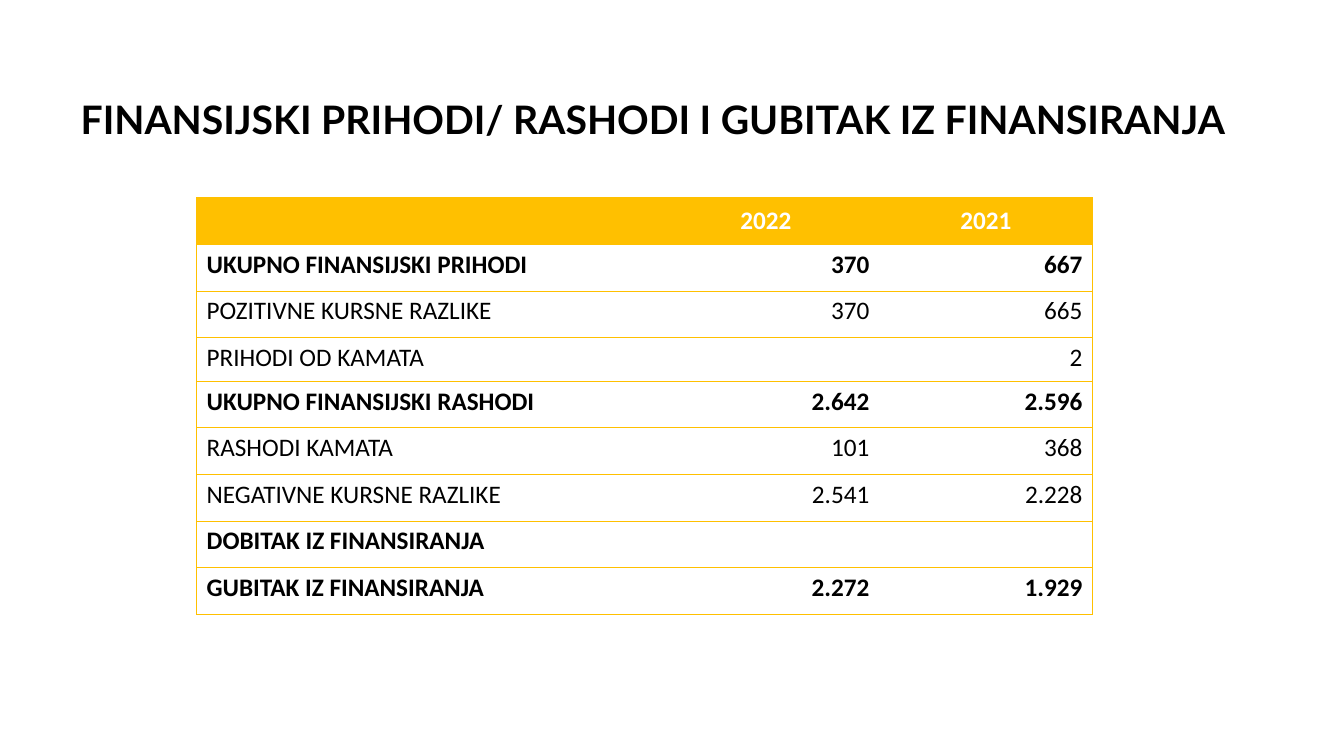
from lxml.etree import SubElement
from pptx import Presentation
from pptx.dml.color import RGBColor
from pptx.enum.text import MSO_ANCHOR, PP_ALIGN
from pptx.oxml.ns import qn
from pptx.util import Pt

GOLD, WHITE, BLACK = "FFC000", "FFFFFF", "000000"
COLUMN_WIDTHS = [325.6, 162.2, 152.2]
ROW_HEIGHT, INTEREST_ROW_HEIGHT = 33.3, 31.2
INTEREST_INCOME = "PRIHODI OD KAMATA"

# Label, 2022, 2021, bold
FINANCE_ROWS = [
    ("", "2022", "2021", True),
    ("UKUPNO FINANSIJSKI PRIHODI", "370", "667", True),
    ("POZITIVNE KURSNE RAZLIKE", "370", "665", False),
    (INTEREST_INCOME, "", "2", False),
    ("UKUPNO FINANSIJSKI RASHODI", "2.642", "2.596", True),
    ("RASHODI KAMATA", "101", "368", False),
    ("NEGATIVNE KURSNE RAZLIKE", "2.541", "2.228", False),
    ("DOBITAK IZ FINANSIRANJA", "", "", True),
    ("GUBITAK IZ FINANSIRANJA", "2.272", "1.929", True),
]


def color(hex_value):
    return RGBColor.from_string(hex_value)


def write(frame, text, *, size=18, font="Calibri", ink=BLACK, bold=False,
          align=PP_ALIGN.LEFT, spacing=None):
    paragraph = frame.paragraphs[0]
    paragraph.alignment = align
    paragraph.line_spacing = spacing
    paragraph.font.size = Pt(size)
    if text:
        run = paragraph.add_run()
        run.text = text
        run.font.size, run.font.name, run.font.bold = Pt(size), font, bold
        run.font.color.rgb = color(ink)


def set_borders(cell, visible_sides):
    properties = cell._tc.get_or_add_tcPr()
    for side in "LRTB":
        line = SubElement(properties, qn(f"a:ln{side}"), w=str(Pt(0.5)))
        if side in visible_sides:
            fill = SubElement(line, qn("a:solidFill"))
            SubElement(fill, qn("a:srgbClr"), val=GOLD)
        else:
            SubElement(line, qn("a:noFill"))


def add_title(slide, text):
    title = slide.shapes.title
    title.left, title.top = Pt(50.4), Pt(34.6)
    title.width, title.height = Pt(875.5), Pt(104.4)
    title.text_frame.word_wrap = True
    title.text_frame.vertical_anchor = MSO_ANCHOR.MIDDLE
    write(title.text_frame, text, size=28, font="Lato", bold=True, spacing=0.9)


def fill_cell(cell, text, bold, is_header, is_label):
    if is_header:
        cell.fill.solid()
        cell.fill.fore_color.rgb = color(GOLD)
        cell.vertical_anchor = MSO_ANCHOR.MIDDLE
        align = PP_ALIGN.CENTER
    else:
        cell.fill.background()
        align = PP_ALIGN.LEFT if is_label else PP_ALIGN.RIGHT
    write(cell.text_frame, text, bold=bold, align=align,
          ink=WHITE if is_header else BLACK)


def add_finance_table(slide):
    heights = [INTEREST_ROW_HEIGHT if row[0] == INTEREST_INCOME else ROW_HEIGHT
               for row in FINANCE_ROWS]
    table = slide.shapes.add_table(
        len(FINANCE_ROWS), len(COLUMN_WIDTHS), Pt(140.4), Pt(141.2),
        Pt(sum(COLUMN_WIDTHS)), Pt(sum(heights))).table
    table.horz_banding = False
    for column, width in zip(table.columns, COLUMN_WIDTHS):
        column.width = Pt(width)
    last_column = len(COLUMN_WIDTHS) - 1
    for r, (*texts, bold) in enumerate(FINANCE_ROWS):
        table.rows[r].height = Pt(heights[r])
        for c, text in enumerate(texts):
            cell = table.cell(r, c)
            # Gold frame and row rules, no inner column rules
            set_borders(cell, "TB" + "L" * (c == 0) + "R" * (c == last_column))
            fill_cell(cell, text, bold, is_header=r == 0, is_label=c == 0)


def main():
    presentation = Presentation()
    presentation.slide_width, presentation.slide_height = Pt(960), Pt(540)
    slide = presentation.slides.add_slide(presentation.slide_layouts[5])
    add_title(slide, "FINANSIJSKI PRIHODI/ RASHODI I GUBITAK IZ FINANSIRANJA")
    add_finance_table(slide)
    presentation.save("out.pptx")


if __name__ == "__main__":
    main()
